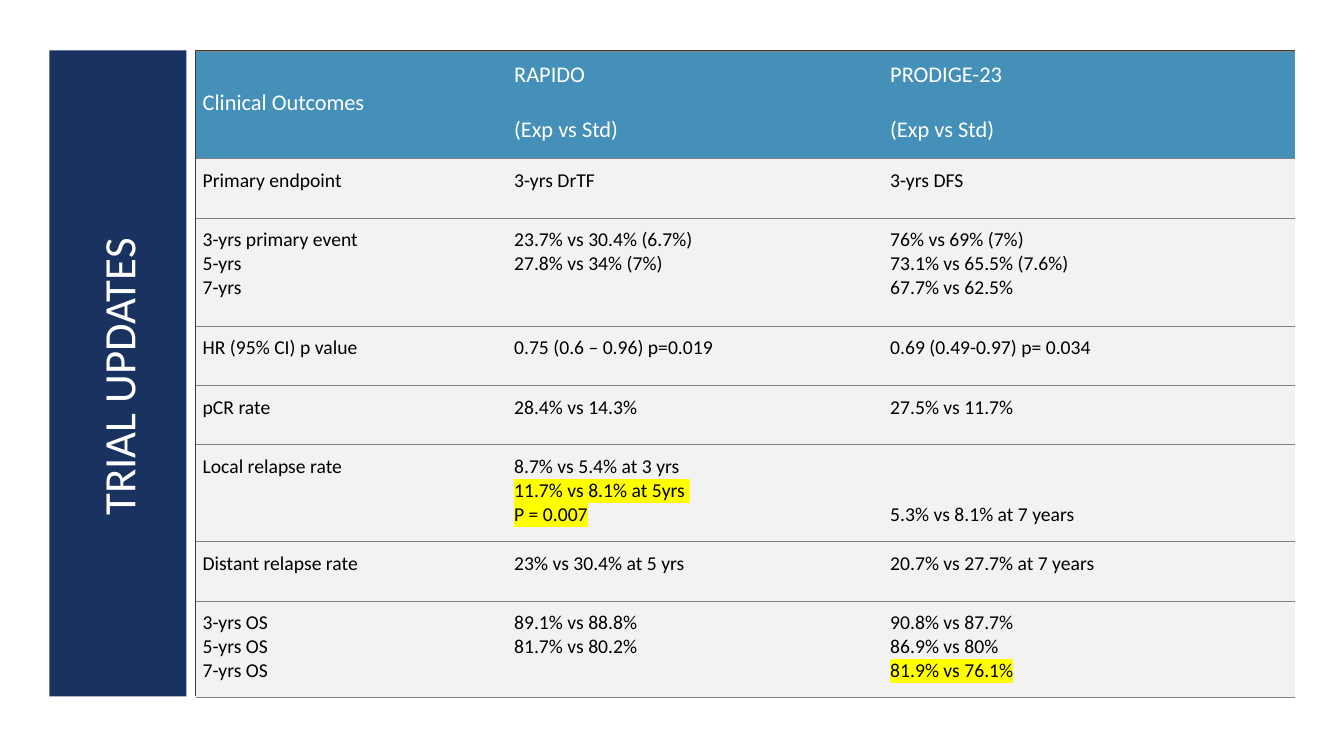
"""Build the trial updates slide with its table of clinical outcomes."""
from dataclasses import dataclass

from lxml import etree
from pptx import Presentation
from pptx import util as u
from pptx.dml.color import RGBColor
from pptx.enum import shapes, text
from pptx.oxml import ns

EMU_PER_PX = 9144


@dataclass(frozen=True)
class Theme:
    font: str = "Calibri"
    navy: str = "1A3260"
    blue: str = "4590B8"
    pale: str = "F2F2F2"
    white: str = "FFFFFF"
    black: str = "000000"
    frame: str = "3D3D3D"
    rule: str = "808080"
    highlight: str = "FFFF00"
    title_size: int = 32
    header_size: int = 16
    body_size: int = 14
    line_width: float = 0.75
    header_gap: float = 19.5


@dataclass(frozen=True)
class Box:
    left: int
    top: int
    width: int
    height: int

    def emu(self) -> tuple[int, ...]:
        return tuple(map(px, (self.left, self.top, self.width, self.height)))


@dataclass(frozen=True)
class Entry:
    lines: tuple[str, ...]
    highlighted: tuple[int, ...] = ()
    anchor: text.MSO_ANCHOR = text.MSO_ANCHOR.TOP


@dataclass(frozen=True)
class Outcome:
    height: int
    entries: tuple[Entry, ...]


def px(length: int) -> int:
    return length * EMU_PER_PX


def entry(*lines: str, highlighted: tuple[int, ...] = (),
          anchor: text.MSO_ANCHOR = text.MSO_ANCHOR.TOP) -> Entry:
    return Entry(lines, highlighted, anchor)


THEME = Theme()
BANNER = Box(49, 50, 136, 641)
FRAME = Box(194, 50, 1090, 640)
TABLE = Box(194, 51, 1090, 640)
TITLE = Box(-135, 347, 504, 64)
COLUMN_WIDTHS = (309, 373, 408)
MIDDLE = text.MSO_ANCHOR.MIDDLE
OUTCOMES = (
    Outcome(103, (entry("Clinical Outcomes", anchor=MIDDLE),
                  entry("RAPIDO", "(Exp vs Std)", anchor=MIDDLE),
                  entry("PRODIGE-23", "(Exp vs Std)", anchor=MIDDLE))),
    Outcome(59, (entry("Primary endpoint"), entry("3-yrs DrTF"), entry("3-yrs DFS"))),
    Outcome(107, (entry("3-yrs primary event", "5-yrs", "7-yrs"),
                  entry("23.7% vs 30.4% (6.7%)", "27.8% vs 34% (7%)"),
                  entry("76% vs 69% (7%)", "73.1% vs 65.5% (7.6%)", "67.7% vs 62.5%"))),
    Outcome(59, (entry("HR (95% CI) p value"), entry("0.75 (0.6 – 0.96) p=0.019"),
                 entry("0.69 (0.49-0.97) p= 0.034"))),
    Outcome(59, (entry("pCR rate"), entry("28.4% vs 14.3%"), entry("27.5% vs 11.7%"))),
    Outcome(94, (entry("Local relapse rate"),
                 entry("8.7% vs 5.4% at 3 yrs", "11.7% vs 8.1% at 5yrs ", "P = 0.007",
                       highlighted=(1, 2)),
                 entry("5.3% vs 8.1% at 7 years", anchor=text.MSO_ANCHOR.BOTTOM))),
    Outcome(59, (entry("Distant relapse rate"), entry("23% vs 30.4% at 5 yrs"),
                 entry("20.7% vs 27.7% at 7 years"))),
    Outcome(94, (entry("3-yrs OS", "5-yrs OS", "7-yrs OS"),
                 entry("89.1% vs 88.8%", "81.7% vs 80.2%"),
                 entry("90.8% vs 87.7%", "86.9% vs 80%", "81.9% vs 76.1%",
                       highlighted=(2,)))),
)


def format_run(run, size: int, color: str) -> None:
    run.font.size = u.Pt(size)
    run.font.color.rgb = RGBColor.from_string(color)
    run.font.name = THEME.font


def highlight_run(run) -> None:
    properties = run.font._element
    highlight = etree.Element(ns.qn("a:highlight"))
    etree.SubElement(highlight, ns.qn("a:srgbClr"), val=THEME.highlight)
    properties.find(ns.qn("a:solidFill")).addnext(highlight)


def set_borders(cell) -> None:
    properties = cell._tc.get_or_add_tcPr()
    for index, side in enumerate(("lnL", "lnR", "lnT", "lnB")):
        line = etree.Element(ns.qn(f"a:{side}"), w=str(u.Pt(THEME.line_width)))
        if side in ("lnL", "lnR"):
            etree.SubElement(line, ns.qn("a:noFill"))
        else:
            fill = etree.SubElement(line, ns.qn("a:solidFill"))
            etree.SubElement(fill, ns.qn("a:srgbClr"), val=THEME.rule)
        properties.insert(index, line)


def fill_cell(cell, content: Entry, is_header: bool) -> None:
    cell.margin_left, cell.margin_top = px(7), px(10)
    cell.margin_right, cell.margin_bottom = px(14), px(15)
    cell.vertical_anchor = content.anchor
    cell.fill.solid()
    cell.fill.fore_color.rgb = RGBColor.from_string(THEME.blue if is_header else THEME.pale)
    set_borders(cell)
    cell.text_frame.text = "\n".join(content.lines)
    size = THEME.header_size if is_header else THEME.body_size
    color = THEME.white if is_header else THEME.black
    for index, paragraph in enumerate(cell.text_frame.paragraphs):
        if is_header and index:
            paragraph.space_before = u.Pt(THEME.header_gap)
        for run in paragraph.runs:
            format_run(run, size, color)
            if index in content.highlighted:
                highlight_run(run)


def add_rectangle(slide, box: Box, fill: str = "", line: str = "") -> None:
    shape = slide.shapes.add_shape(shapes.MSO_SHAPE.RECTANGLE, *box.emu())
    shape.shadow.inherit = False
    if fill:
        shape.fill.solid()
        shape.fill.fore_color.rgb = RGBColor.from_string(fill)
    else:
        shape.fill.background()
    if line:
        shape.line.color.rgb = RGBColor.from_string(line)
        shape.line.width = u.Pt(THEME.line_width)
    else:
        shape.line.fill.background()


def add_outcome_table(slide) -> None:
    table = slide.shapes.add_table(len(OUTCOMES), len(COLUMN_WIDTHS), *TABLE.emu()).table
    table.first_row = table.horz_banding = False
    for column, width in zip(table.columns, COLUMN_WIDTHS):
        column.width = px(width)
    for row_index, (row, outcome) in enumerate(zip(table.rows, OUTCOMES)):
        row.height = px(outcome.height)
        for cell, content in zip(row.cells, outcome.entries):
            fill_cell(cell, content, is_header=row_index == 0)


def add_title(slide) -> None:
    shape = slide.shapes.add_textbox(*TITLE.emu())
    shape.rotation = 270
    shape.text_frame.word_wrap = True
    shape.text_frame.text = " TRIAL UPDATES"
    paragraph = shape.text_frame.paragraphs[0]
    paragraph.alignment = text.PP_ALIGN.CENTER
    format_run(paragraph.runs[0], THEME.title_size, THEME.white)


def main() -> None:
    presentation = Presentation()
    presentation.slide_width, presentation.slide_height = px(1333), px(750)
    slide = presentation.slides.add_slide(presentation.slide_layouts[6])
    add_rectangle(slide, BANNER, fill=THEME.navy)
    add_rectangle(slide, FRAME, line=THEME.frame)
    add_outcome_table(slide)
    add_title(slide)
    presentation.save("out.pptx")


if __name__ == "__main__":
    main()
